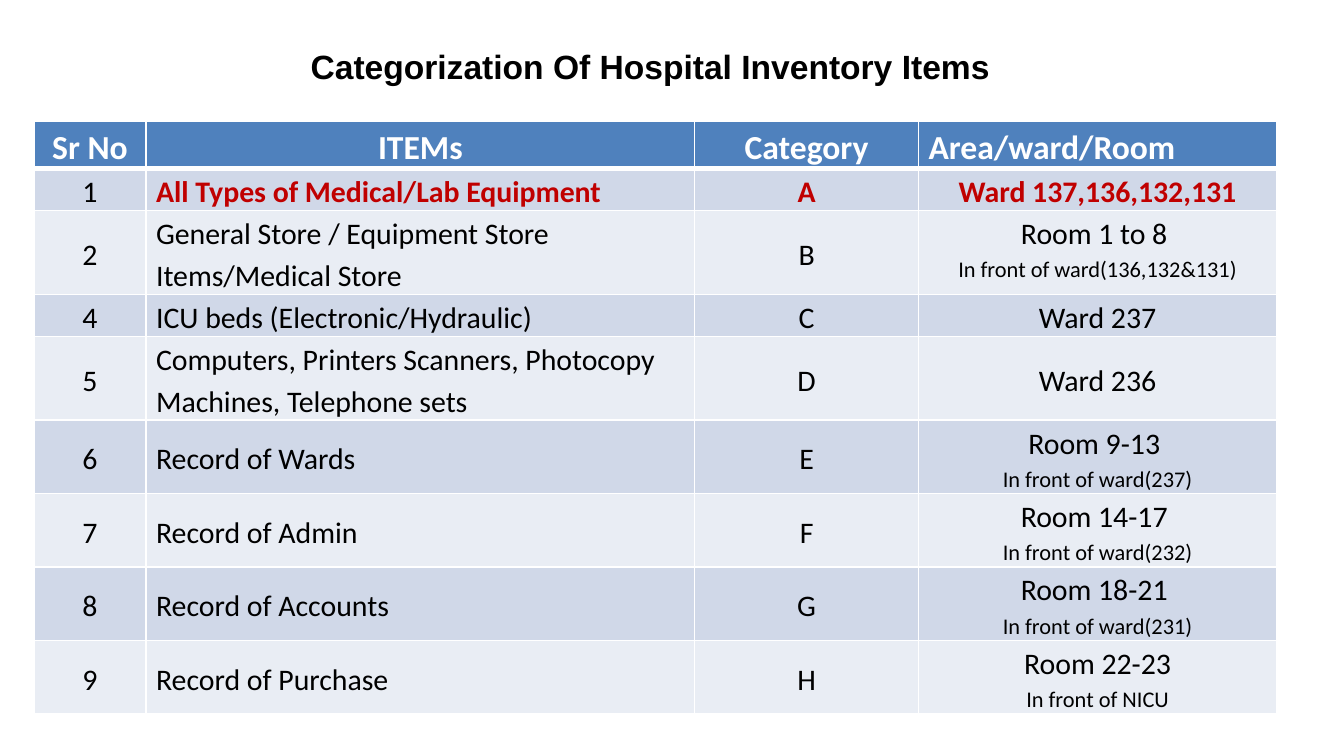
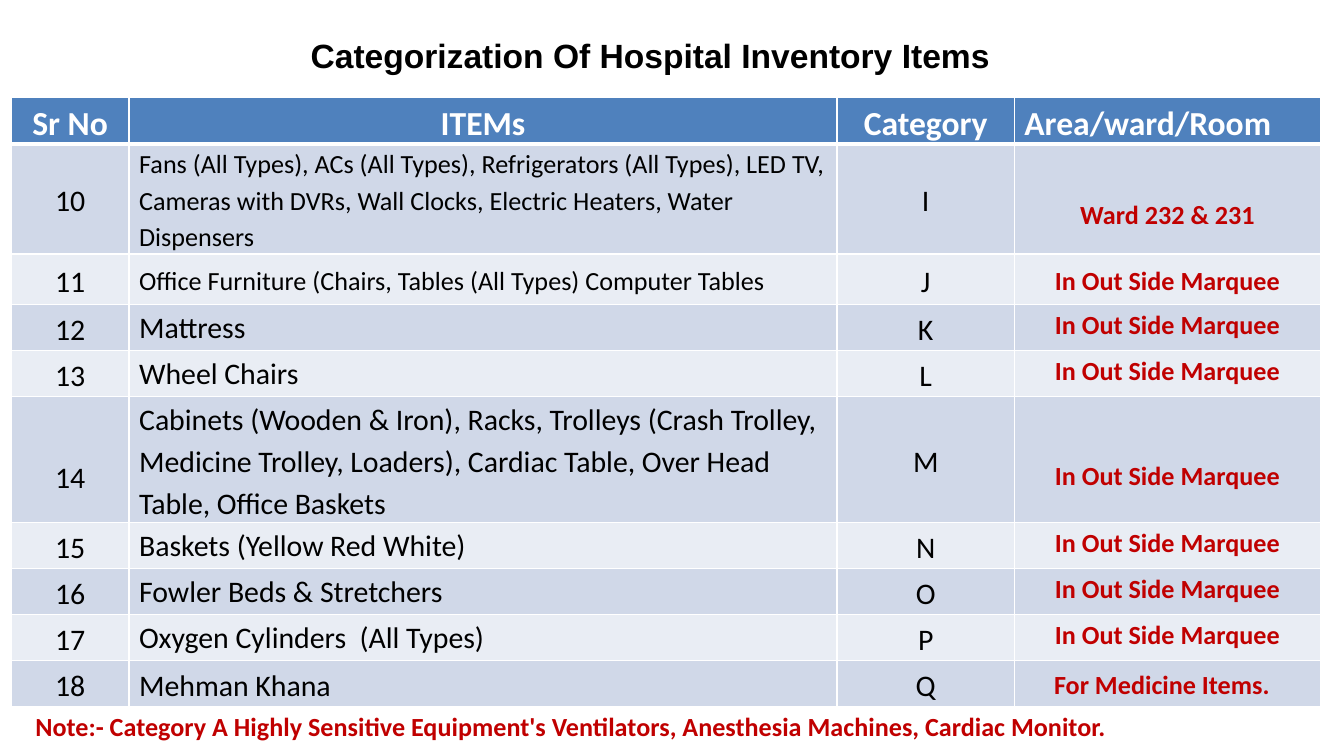
from lxml import etree
from pptx import Presentation
from pptx.dml.color import RGBColor
from pptx.enum import text as t
from pptx.oxml import ns
from pptx.util import Cm, Pt

BLACK, WHITE, RED = "000000", "FFFFFF", "C00000"
HEADER_BLUE, BANDS = "4F81BD", ("D0D8E8", "E9EDF4")
LEFT, CENTER = t.PP_ALIGN.LEFT, t.PP_ALIGN.CENTER
TOP, MIDDLE = t.MSO_ANCHOR.TOP, t.MSO_ANCHOR.MIDDLE
INSET = 0.19
TITLE = "Categorization Of Hospital Inventory Items "
HEADINGS = ("Sr No", "ITEMs", "Category", "Area/ward/Room")
RED_BOLD = {"color": RED, "bold": True}
MARQUEE = "In Out Side Marquee"


def write_text(frame, text, size=16, color=BLACK, bold=False, font="Calibri",
               align=LEFT, anchor=MIDDLE, spacing=None, detail_size=12):
    """Write one paragraph per line; lines after the first use detail_size."""
    frame.word_wrap = True
    frame.vertical_anchor = anchor
    for index, line in enumerate(text.split("\n")):
        paragraph = frame.add_paragraph() if index else frame.paragraphs[0]
        paragraph.alignment = align
        paragraph.line_spacing = spacing
        run = paragraph.add_run()
        run.text = line
        run.font.name = font
        run.font.size = Pt(detail_size if index else size)
        run.font.bold = bold
        run.font.color.rgb = RGBColor.from_string(color)


def fill_cell(cell, text, fill, bottom_line=1, pad_top=0, pad_left=INSET,
              anchor=MIDDLE, **text_format):
    """Give a table cell its borders, fill, margins and text."""
    properties = cell._tc.get_or_add_tcPr()
    for side, width in (("L", 1), ("R", 1), ("T", 1), ("B", bottom_line)):
        line = etree.SubElement(properties, ns.qn(f"a:ln{side}"), w=str(Pt(width)))
        solid = etree.SubElement(line, ns.qn("a:solidFill"))
        etree.SubElement(solid, ns.qn("a:srgbClr"), val=WHITE)
    cell.fill.solid()
    cell.fill.fore_color.rgb = RGBColor.from_string(fill)
    cell.margin_left, cell.margin_right = Cm(pad_left), Cm(INSET)
    cell.margin_top, cell.margin_bottom = Cm(pad_top), Cm(0)
    cell.vertical_anchor = anchor
    write_text(cell.text_frame, text, anchor=anchor, spacing=1.15, **text_format)


# Each row: height, four texts, then format changes by column number.
area_top = {3: {"anchor": TOP}}
store_rows = [
    (0.74, "1", "All Types of Medical/Lab Equipment", "A", "Ward 137,136,132,131",
     {1: RED_BOLD, 2: RED_BOLD, 3: {"anchor": TOP, **RED_BOLD}}),
    (1.48, "2", "General Store / Equipment Store Items/Medical Store", "B",
     "Room 1 to 8 \nIn front of ward(136,132&131)", area_top),
    (0.74, "4", "ICU beds (Electronic/Hydraulic)", "C", "Ward 237", area_top),
    (1.48, "5", "Computers, Printers Scanners, Photocopy Machines, Telephone sets",
     "D", "Ward 236", {}),
    (1.29, "6", "Record of Wards", "E", "Room 9-13 \nIn front of ward(237)", area_top),
    (1.29, "7", "Record of Admin", "F", "Room 14-17 \nIn front of ward(232)", area_top),
    (1.29, "8", "Record of Accounts", "G", "Room 18-21 \nIn front of ward(231)", area_top),
    (1.18, "9", "Record of Purchase", "H", "Room 22-23\nIn front of NICU", area_top),
]

area_red = {"size": 14, **RED_BOLD}
area_lowered = {"pad_top": 0.55, **area_red}
plain_row = {1: {"anchor": TOP}, 3: {"anchor": TOP, **area_red}}
marquee_rows = [
    (1.98, "10", "Fans (All Types), ACs (All Types), Refrigerators (All Types), LED TV, "
     "Cameras with DVRs, Wall Clocks, Electric Heaters, Water Dispensers", "I",
     "Ward 232 & 231", {1: {"size": 14, "anchor": TOP}, 3: area_lowered}),
    (0.96, "11", "Office Furniture (Chairs, Tables (All Types) Computer Tables", "J",
     MARQUEE, {1: {"size": 14}, 3: area_red}),
    (0.87, "12", "Mattress", "K", MARQUEE, plain_row),
    (0.87, "13", "Wheel Chairs", "L", MARQUEE, plain_row),
    (2.25, "14", "Cabinets (Wooden & Iron), Racks, Trolleys (Crash Trolley, Medicine "
     "Trolley, Loaders), Cardiac Table, Over Head Table, Office Baskets", "M", MARQUEE,
     {0: {"pad_top": 0.59}, 1: {"anchor": TOP}, 3: area_lowered}),
    (0.87, "15", "Baskets (Yellow Red White)", "N", MARQUEE, plain_row),
    (0.87, "16", "Fowler Beds & Stretchers", "O", MARQUEE, plain_row),
    (0.87, "17", "Oxygen Cylinders  (All Types)", "P", MARQUEE, plain_row),
    (0.87, "18", "Mehman Khana", "Q", "For Medicine Items.",
     {3: {"align": LEFT, "pad_left": 0.75, **area_red}}),
]

# Each slide: title top, table left and top, column widths, header height, rows.
slides = [
    (0, 0.64, 2.29, (2.12, 10.37, 4.23, 6.77), 0.84, store_rows),
    (-0.21, 0.21, 1.83, (2.23, 13.38, 3.35, 5.79), 0.87, marquee_rows),
]

presentation = Presentation()
presentation.slide_width, presentation.slide_height = Cm(25.4), Cm(14.29)

for title_top, left, top, widths, header_height, rows in slides:
    slide = presentation.slides.add_slide(presentation.slide_layouts[5])
    title = slide.shapes.title
    title.left, title.top = Cm(0.42), Cm(title_top)
    title.width, title.height = Cm(23.92), Cm(2.49)
    write_text(title.text_frame, TITLE, size=18, bold=True, font="Arial", align=CENTER)

    heights = [header_height] + [row[0] for row in rows]
    table = slide.shapes.add_table(len(heights), len(widths), Cm(left), Cm(top),
                                   Cm(sum(widths)), Cm(sum(heights))).table
    table.horz_banding = False
    for column, width in zip(table.columns, widths):
        column.width = Cm(width)
    for table_row, height in zip(table.rows, heights):
        table_row.height = Cm(height)

    for column, heading in enumerate(HEADINGS):
        fill_cell(table.cell(0, column), heading, HEADER_BLUE, bottom_line=3, size=18,
                  color=WHITE, bold=True, align=LEFT if column == 3 else CENTER)
    for index, (_, *texts, changes) in enumerate(rows):
        for column, text in enumerate(texts):
            cell_format = {"align": LEFT if column == 1 else CENTER,
                           **changes.get(column, {})}
            fill_cell(table.cell(index + 1, column), text, BANDS[index % 2], **cell_format)

note = slide.shapes.add_textbox(Cm(0.42), Cm(13.31), Cm(23.7), Cm(0.8))
write_text(note.text_frame, "Note:- Category A Highly Sensitive Equipment's Ventilators, "
           "Anesthesia Machines, Cardiac Monitor.", size=14, anchor=TOP, **RED_BOLD)

presentation.save("out.pptx")
